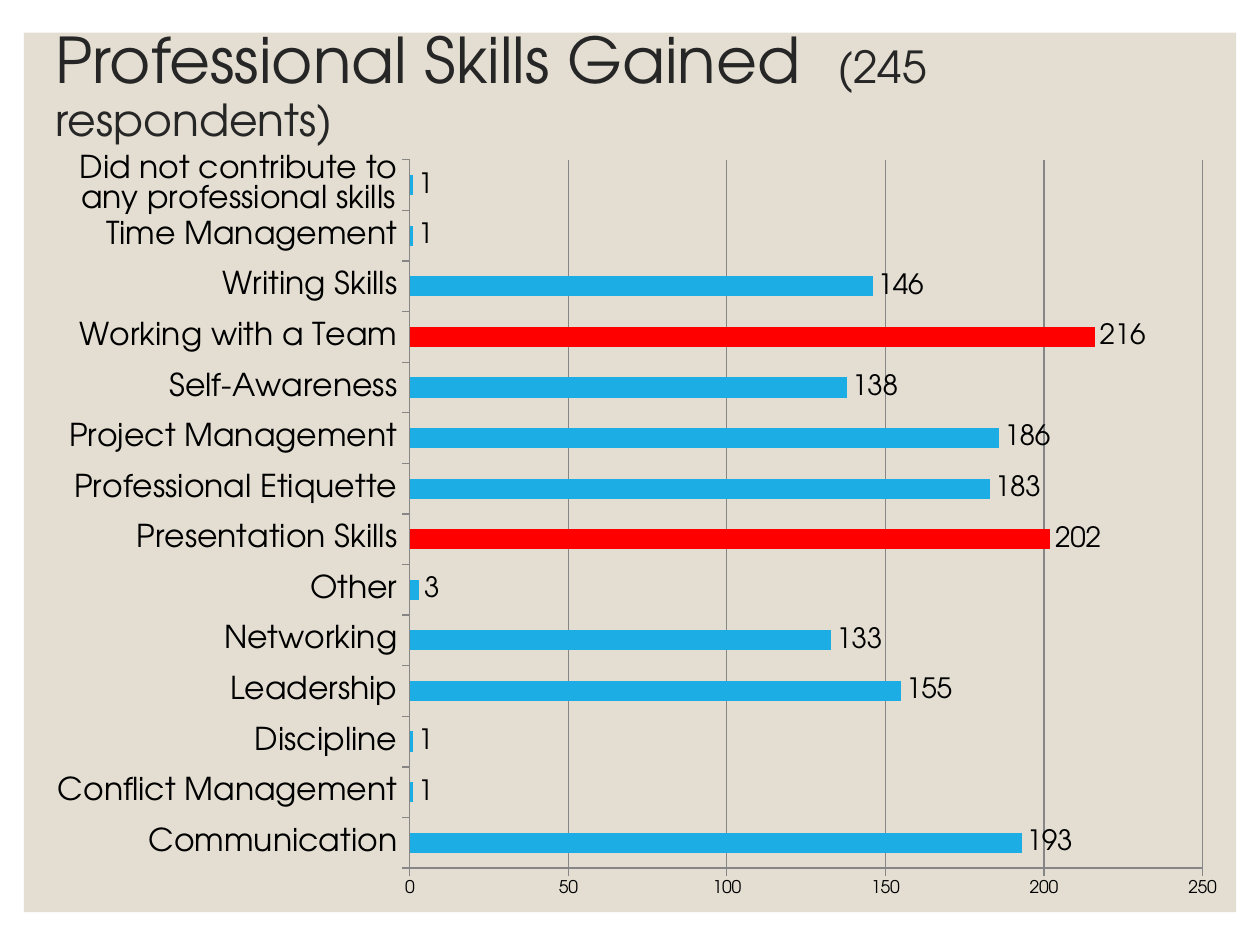
from lxml import etree
from pptx import Presentation
from pptx import util as u
from pptx.chart.data import CategoryChartData
from pptx.dml.color import RGBColor
from pptx.enum import chart as ch, shapes, text

W, H = 10, 7.5
FONT = "TeX Gyre Adventor"
COLORS = {
    "panel": "E3DED1",
    "title": "262626",
    "text": "000000",
    "bar": "1CADE4",
    "top": "FF0000",
    "grid": "868686",
}
SKILLS = [
    ("Communication", 193),
    ("Conflict Management", 1),
    ("Discipline", 1),
    ("Leadership", 155),
    ("Networking", 133),
    ("Other", 3),
    ("Presentation Skills", 202),
    ("Professional Etiquette", 183),
    ("Project Management", 186),
    ("Self-Awareness", 138),
    ("Working with a Team", 216),
    ("Writing Skills", 146),
    ("Time Management", 1),
    ("Did not contribute to any professional skills", 1),
]
HIGHLIGHT_FROM = 200


def rgb(name):
    return RGBColor.from_string(COLORS[name])


def box(x, y, w, h):
    return [u.Inches(round(v, 2)) for v in (x * W, y * H, w * W, h * H)]


def set_font(font, size, color="text"):
    font.name, font.size = FONT, u.Pt(size)
    font.bold = False
    font.color.rgb = rgb(color)


def fill(fmt, color):
    fmt.fill.solid()
    fmt.fill.fore_color.rgb = rgb(color)


def add_panel(s):
    sp = s.shapes.add_shape(shapes.MSO_SHAPE.RECTANGLE, *box(0.019, 0.035, 0.962, 0.93))
    sp.shadow.inherit = False
    fill(sp, "panel")
    sp.line.fill.background()
    s.shapes._spTree.insert(2, sp._element)


def set_title(s, runs):
    sp = s.shapes.title
    sp.left, sp.top, sp.width, sp.height = box(0.034, 0.031, 0.901, 0.119)
    tf = sp.text_frame
    tf.word_wrap = True
    tf.auto_size = text.MSO_AUTO_SIZE.NONE
    tf.vertical_anchor = text.MSO_ANCHOR.MIDDLE
    p = tf.paragraphs[0]
    p.alignment = text.PP_ALIGN.LEFT
    p.line_spacing = 0.9
    for words, size in runs:
        r = p.add_run()
        r.text = words
        set_font(r.font, size, "title")


def style_axis(axis, size):
    set_font(axis.tick_labels.font, size)
    axis.major_tick_mark = ch.XL_TICK_MARK.CROSS if size < 12 else ch.XL_TICK_MARK.OUTSIDE
    axis.format.line.color.rgb = rgb("grid")


def set_plot_area(chart, x, y, w, h):
    area = chart._chartSpace.chart.plotArea
    ns = area.nsmap["c"]
    for old in area.findall(f"{{{ns}}}layout"):
        area.remove(old)
    layout = etree.Element(f"{{{ns}}}layout")
    manual = etree.SubElement(layout, f"{{{ns}}}manualLayout")
    values = dict(layoutTarget="inner", xMode="edge", yMode="edge", x=x, y=y, w=w, h=h)
    for tag, val in values.items():
        etree.SubElement(manual, f"{{{ns}}}{tag}").set("val", str(val))
    area.insert(0, layout)


def add_skill_chart(s):
    data = CategoryChartData()
    data.categories = [name for name, _ in SKILLS]
    data.add_series("Series 1", [count for _, count in SKILLS])
    frame = s.shapes.add_chart(
        ch.XL_CHART_TYPE.BAR_CLUSTERED, *box(0.027, 0.148, 0.959, 0.817), data)
    chart = frame.chart
    chart.has_legend = chart.has_title = False
    set_font(chart.font, 10)
    set_plot_area(chart, 0.311, 0.026, 0.656, 0.917)

    style_axis(chart.category_axis, 18)
    axis = chart.value_axis
    style_axis(axis, 10)
    axis.minimum_scale, axis.maximum_scale, axis.major_unit = 0, 250, 50
    axis.has_major_gridlines = True
    axis.major_gridlines.format.line.color.rgb = rgb("grid")

    plot = chart.plots[0]
    plot.vary_by_categories = False
    plot.gap_width = 150
    series = plot.series[0]
    fill(series.format, "bar")
    for i, (_, count) in enumerate(SKILLS):
        if count > HIGHLIGHT_FROM:
            fill(series.points[i].format, "top")
    labels = series.data_labels
    labels.show_value = True
    labels.position = ch.XL_LABEL_POSITION.OUTSIDE_END
    set_font(labels.font, 16)


def main():
    prs = Presentation()
    prs.slide_width, prs.slide_height = u.Inches(W), u.Inches(H)
    s = prs.slides.add_slide(prs.slide_layouts[5])
    add_panel(s)
    set_title(s, [("Professional Skills Gained ", 36), (" ", 39.6), ("(245 respondents)", 25.2)])
    add_skill_chart(s)
    prs.save("out.pptx")


if __name__ == "__main__":
    main()
